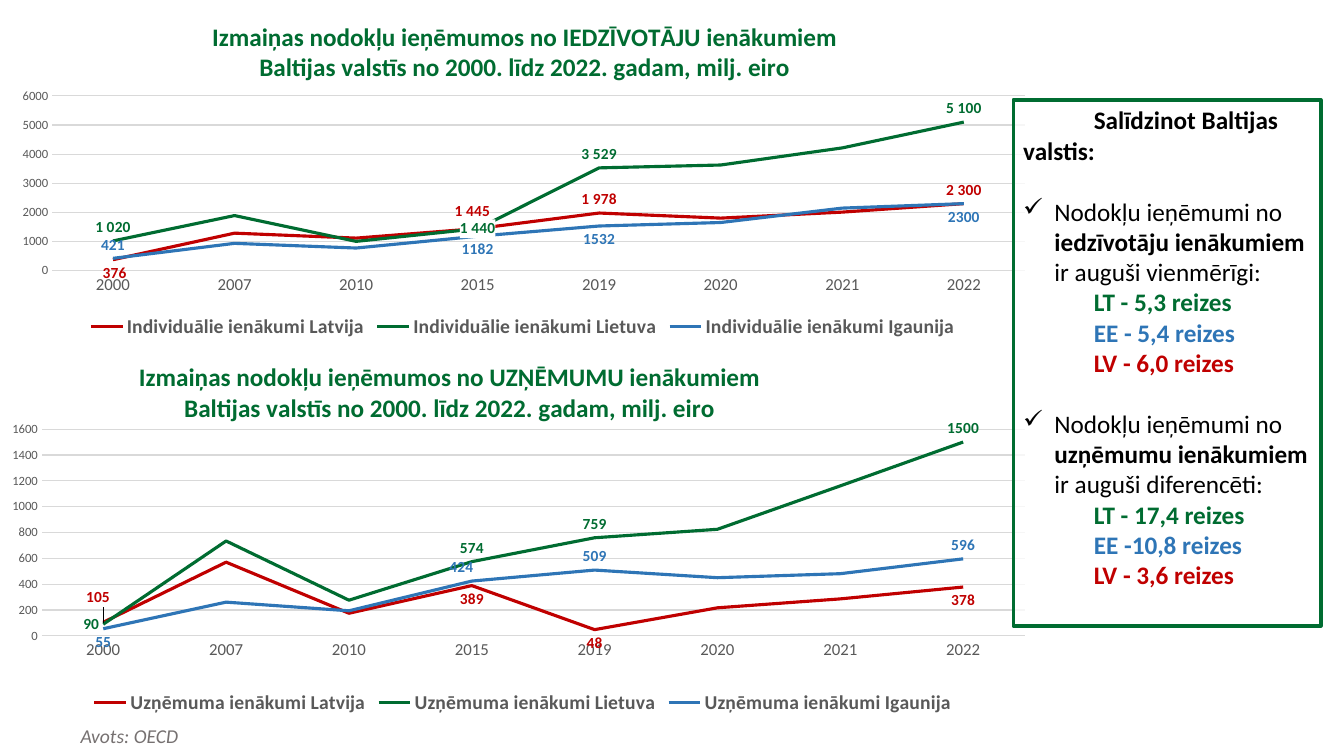
import pptx
import pptx.chart.data
import pptx.dml.color
import pptx.enum.chart
import pptx.enum.shapes
import pptx.enum.text
import pptx.oxml
import pptx.oxml.ns
import pptx.util

Inches, Pt = pptx.util.Inches, pptx.util.Pt
POS = pptx.enum.chart.XL_LABEL_POSITION
FONT = "Calibri"
BLACK, WHITE, GREY, GRID = "000000", "FFFFFF", "595959", "D9D9D9"
RED, GREEN, BLUE = "C00000", "006C31", "2E75B6"
SPACED, PLAIN = "###\\ ##0", "##0"

YEARS = ["2000", "2007", "2010", "2015", "2019", "2020", "2021", "2022"]
LABELLED = [0, 3, 4, 7]
T, B, L, C = POS.ABOVE, POS.BELOW, POS.LEFT, POS.CENTER
SUBTITLE = "Baltijas valstīs no 2000. līdz 2022. gadam, milj. eiro"

CHARTS = [
    {"title": "Izmaiņas nodokļu ieņēmumos no IEDZĪVOTĀJU ienākumiem",
     "top": 0, "height": 3.4, "max": 6000, "step": 1000,
     "title_at": (0.2, 0.05), "plot": (0.05, 0.28, 0.93, 0.51),
     "series": [
         ("Individuālie ienākumi Latvija", RED, SPACED, [B, T, T, T],
          [376, 1287, 1116, 1445, 1978, 1803, 2009, 2300]),
         ("Individuālie ienākumi Lietuva", GREEN, SPACED, [T, C, T, T],
          [1020, 1891, 1005, 1440, 3529, 3628, 4215, 5100]),
         ("Individuālie ienākumi Igaunija", BLUE, PLAIN, [T, B, B, B],
          [421, 936, 776, 1182, 1532, 1652, 2146, 2300])],
     "shifts": {(0, 3): (-0.005, -0.01)}},
    {"title": "Izmaiņas nodokļu ieņēmumos no UZŅĒMUMU ienākumiem",
     "top": 3.4, "height": 3.73, "max": 1600, "step": 200,
     "title_at": (0.13, 0.04), "plot": (0.04, 0.23, 0.94, 0.55),
     "series": [
         ("Uzņēmuma ienākumi Latvija", RED, PLAIN, [T, B, B, B],
          [105, 570, 175, 389, 48, 217, 286, 378]),
         ("Uzņēmuma ienākumi Lietuva", GREEN, PLAIN, [L, T, T, T],
          [90, 734, 276, 574, 759, 825, 1161, 1500]),
         ("Uzņēmuma ienākumi Igaunija", BLUE, PLAIN, [B, T, T, T],
          [55, 261, 194, 424, 509, 450, 481, 596])],
     "shifts": {(0, 0): (-0.005, -0.03), (2, 3): (-0.01, 0)}},
]

SUMMARY = [
    ("head", [("Salīdzinot Baltijas valstis:", BLACK, True)]),
    ("check", [("Nodokļu ieņēmumi no ", BLACK, False),
               ("iedzīvotāju ienākumiem ", BLACK, True),
               ("ir auguši vienmērīgi:", BLACK, False)]),
    ("rate", [("LT - 5,3 reizes", GREEN, True)]),
    ("rate", [("EE - 5,4 reizes", BLUE, True)]),
    ("rate", [("LV - 6,0 reizes", RED, True)]),
    ("check", [("Nodokļu ieņēmumi no ", BLACK, False),
               ("uzņēmumu ienākumiem", BLACK, True),
               (" ir auguši diferencēti:", BLACK, False)]),
    ("rate", [("LT - 17,4 reizes", GREEN, True)]),
    ("rate", [("EE -10,8 reizes", BLUE, True)]),
    ("rate", [("LV - 3,6 reizes", RED, True)]),
]


def rgb(color):
    return pptx.dml.color.RGBColor.from_string(color)


def style(font, size, color, bold=False, italic=False):
    font.name, font.size, font.bold, font.italic = FONT, Pt(size), bold, italic
    font.color.rgb = rgb(color)


def xml(tag, body="", attrs=""):
    ns = pptx.oxml.ns.nsdecls("c", "a")
    return pptx.oxml.parse_xml(f"<{tag} {ns} {attrs}>{body}</{tag}>")


def set_layout(el, index, values, modes=""):
    for old in el.findall(pptx.oxml.ns.qn("c:layout")):
        el.remove(old)
    sizes = "".join(f'<c:{k} val="{v}"/>' for k, v in zip("xywh", values))
    el.insert(index, xml("c:layout", f"<c:manualLayout>{modes}{sizes}</c:manualLayout>"))


def indent(p, left, first):
    pPr = p._p.get_or_add_pPr()
    pPr.set("marL", str(Inches(left)))
    pPr.set("indent", str(Inches(first)))
    return pPr


def add_labels(series, color, positions, row, shifts):
    for i, pos in zip(LABELLED, positions):
        label = series.points[i].data_label
        style(label.font, 11, color, True)
        label.position = pos
        dLbl = series.data_labels._element.xpath(f'c:dLbl[c:idx/@val="{i}"]')[0]
        if pos == C:
            fill = f'<a:solidFill><a:srgbClr val="{WHITE}"/></a:solidFill>'
            dLbl.xpath("c:txPr")[0].addprevious(xml("c:spPr", fill))
        if (row, i) in shifts:
            set_layout(dLbl, 1, shifts[row, i])
    series.data_labels.show_value = False


def add_line_chart(s, item):
    data = pptx.chart.data.CategoryChartData()
    data.categories = YEARS
    for name, color, fmt, positions, values in item["series"]:
        data.add_series(name, values, fmt)
    chart = s.shapes.add_chart(
        pptx.enum.chart.XL_CHART_TYPE.LINE, 0, Inches(item["top"]),
        Inches(10.37), Inches(item["height"]), data).chart
    style(chart.font, 10, BLACK)

    title = chart.chart_title
    title.text_frame.text = item["title"] + "\n" + SUBTITLE
    for p in title.text_frame.paragraphs:
        style(p.runs[0].font, 18, GREEN, True)
    edge = '<c:xMode val="edge"/><c:yMode val="edge"/>'
    set_layout(title._element, 1, item["title_at"], edge)
    set_layout(chart._chartSpace.xpath("c:chart/c:plotArea")[0], 0, item["plot"],
               '<c:layoutTarget val="inner"/>' + edge)

    chart.has_legend = True
    chart.legend.position = pptx.enum.chart.XL_LEGEND_POSITION.BOTTOM
    chart.legend.include_in_layout = False
    style(chart.legend.font, 14, GREY, True)

    cat, val = chart.category_axis, chart.value_axis
    for axis, size in ((cat, 12), (val, 9)):
        axis.major_tick_mark = pptx.enum.chart.XL_TICK_MARK.NONE
        style(axis.tick_labels.font, size, GREY)
    val.minimum_scale, val.maximum_scale, val.major_unit = 0, item["max"], item["step"]
    val.tick_labels.number_format = "0"
    val.tick_labels.number_format_is_linked = False
    val.format.line.fill.background()
    for line in (cat.format.line, val.major_gridlines.format.line):
        line.color.rgb, line.width = rgb(GRID), Pt(0.75)

    chart.plots[0].vary_by_categories = False
    for row, (series, spec) in enumerate(zip(chart.plots[0].series, item["series"])):
        color, positions = spec[1], spec[3]
        series.smooth = False
        series.format.line.color.rgb = rgb(color)
        series.format.line.width = Pt(2.25)
        add_labels(series, color, positions, row, item["shifts"])


def add_summary(s):
    sp = s.shapes.add_shape(pptx.enum.shapes.MSO_SHAPE.RECTANGLE,
                            Inches(10.05), Inches(0.99), Inches(3.05), Inches(5.22))
    sp.shadow.inherit = False
    sp.fill.solid()
    sp.fill.fore_color.rgb = rgb(WHITE)
    sp._element.spPr.xpath("a:solidFill/a:srgbClr")[0].append(
        xml("a:alpha", attrs='val="78000"'))
    sp.line.color.rgb, sp.line.width = rgb(GREEN), Pt(2.5)
    tf = sp.text_frame
    tf.word_wrap = True
    tf.vertical_anchor = pptx.enum.text.MSO_ANCHOR.TOP
    for i, (kind, runs) in enumerate(SUMMARY):
        p = tf.paragraphs[0] if i == 0 else tf.add_paragraph()
        p.alignment = pptx.enum.text.PP_ALIGN.LEFT
        if kind == "check":
            p.space_before = Pt(22)
            indent(p, 0.31, -0.31).append(xml("a:buChar", attrs='char="✓"'))
        else:
            indent(p, 0, 0.7)
        for text, color, bold in runs:
            r = p.add_run()
            r.text = text
            style(r.font, 18, color, bold)


def add_source(s):
    tf = s.shapes.add_textbox(0, Inches(7.13), Inches(2.49), Inches(0.34)).text_frame
    tf.word_wrap = True
    tf.text = "Avots: OECD"
    p = tf.paragraphs[0]
    p.alignment = pptx.enum.text.PP_ALIGN.JUSTIFY
    indent(p, 0, 0.7)
    style(p.runs[0].font, 14, "767171", italic=True)


def main():
    prs = pptx.Presentation()
    prs.slide_width, prs.slide_height = Inches(13.33), Inches(7.5)
    s = prs.slides.add_slide(prs.slide_layouts[6])
    add_source(s)
    for item in CHARTS:
        add_line_chart(s, item)
    add_summary(s)
    prs.save("out.pptx")


if __name__ == "__main__":
    main()
